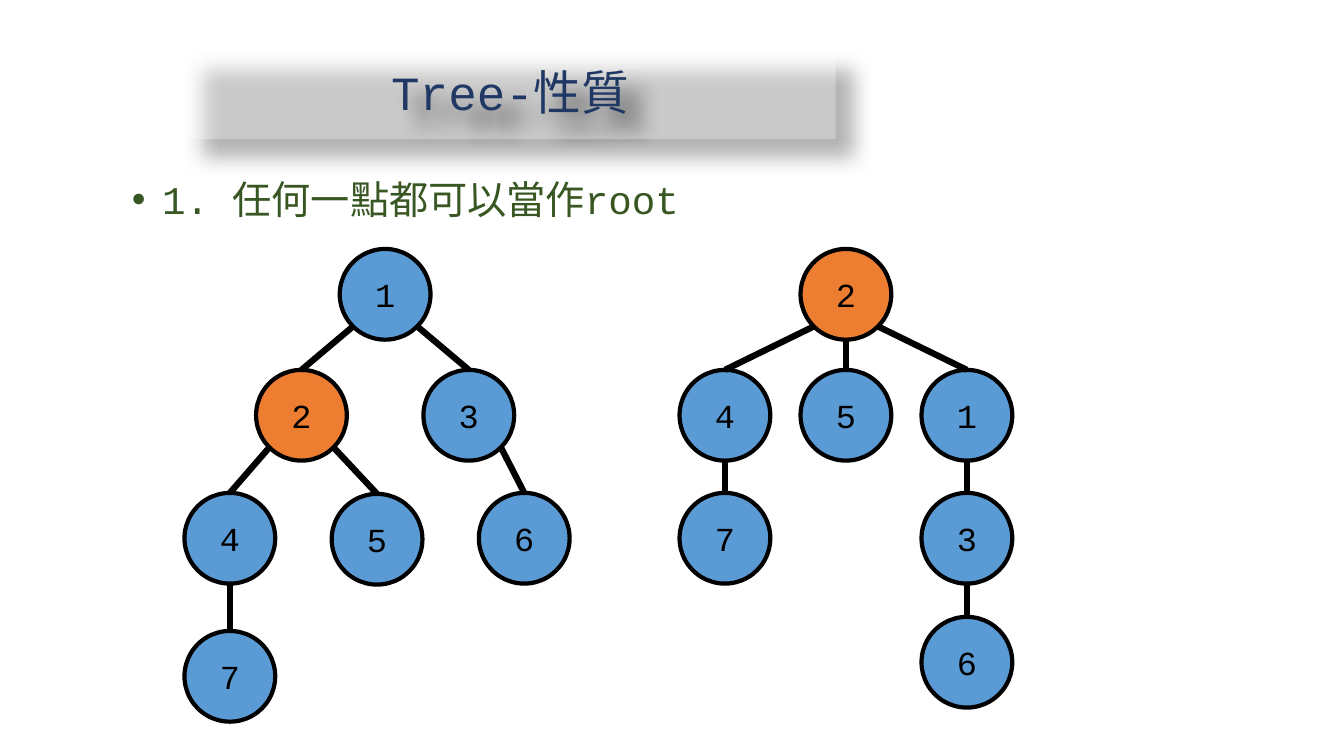
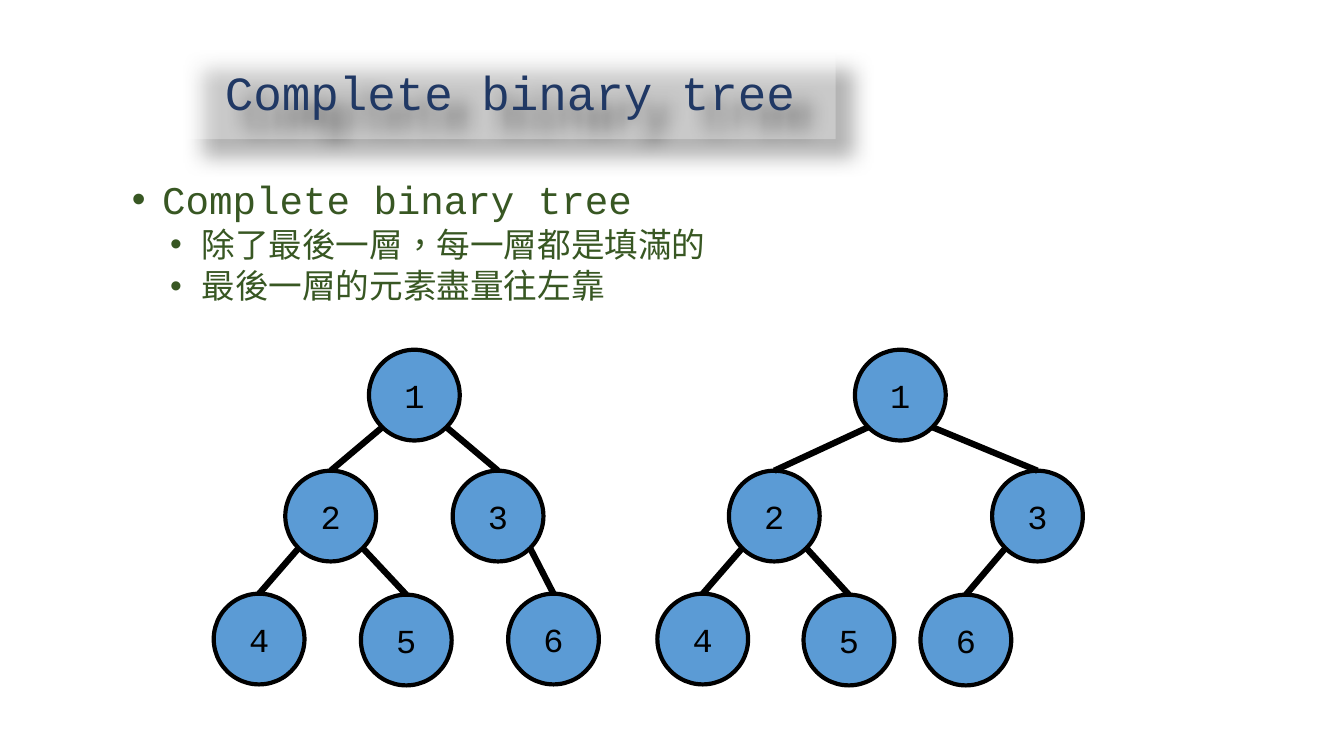
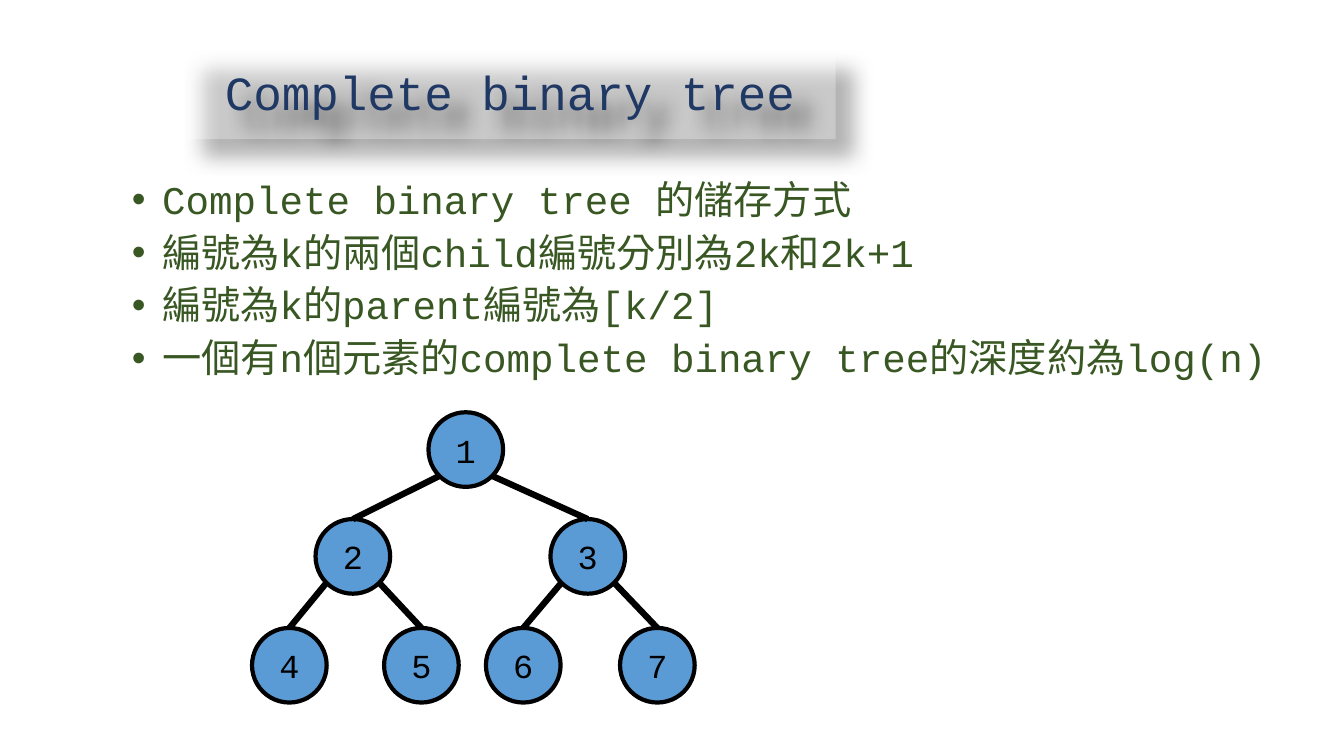
import math
from dataclasses import dataclass
from lxml import etree
from pptx import Presentation
from pptx import util as u
from pptx.dml.color import RGBColor
from pptx.enum import shapes, text
from pptx.oxml import ns


@dataclass(frozen=True)
class Theme:
    font: str = "Courier New"
    title: str = "203864"
    body: str = "385723"
    ink: str = "000000"
    node: str = "5B9BD5"
    marked: str = "ED7D31"
    band: str = "FFFFFF"
    title_size: int = 34
    body_sizes: tuple = (28, 24)
    node_size: int = 24
    outline: float = 3
    edge: float = 4.5


theme = Theme()


def add_run(paragraph, words, size, color):
    run = paragraph.add_run()
    run.text = words
    run.font.size = u.Pt(size)
    run.font.color.rgb = RGBColor.from_string(color)
    run.font.name = theme.font
    properties = run.font._element if hasattr(run.font, "_element") else run._r.get_or_add_rPr()
    properties.set("lang", "zh-TW")
    etree.SubElement(properties, ns.qn("a:ea"), typeface=theme.font)


def add_child(parent, tag, **attributes):
    return etree.SubElement(parent, ns.qn(tag), **attributes)


BULLET_LEVELS = [(0.3, -0.3, 7.5), (0.69, -0.31, 3.8)]

left_tree = {
    "1": (3.37, 2.47, None), "2": (2.54, 3.67, "1"), "3": (4.2, 3.67, "1"),
    "4": (1.83, 4.89, "2"), "5": (3.29, 4.9, "2"), "6": (4.75, 4.89, "3"),
}
rooted_at_one = left_tree | {"7": (1.83, 6.26, "4")}
rooted_at_two = {
    "2": (7.94, 2.47, None), "4": (6.74, 3.67, "2"), "5": (7.94, 3.67, "2"),
    "1": (9.14, 3.67, "2"), "7": (6.74, 4.89, "4"), "3": (9.14, 4.89, "1"),
    "6": (9.14, 6.12, "3"),
}
not_complete = {label: (round(x + 0.29, 2), round(y + 1, 2), parent)
                for label, (x, y, parent) in left_tree.items()}
complete = {
    "1": (8.48, 3.47, None), "2": (7.23, 4.67, "1"), "3": (9.84, 4.67, "1"),
    "4": (6.52, 5.89, "2"), "5": (7.97, 5.9, "2"), "6": (9.13, 5.9, "3"),
}
numbered = {
    "1": (4.25, 4.09, None), "2": (3.13, 5.15, "1"), "3": (5.46, 5.15, "1"),
    "4": (2.5, 6.23, "2"), "5": (3.81, 6.23, "2"),
    "6": (4.82, 6.23, "3"), "7": (6.15, 6.23, "3"),
}

pages = [
    ("Tree-性質",
     [(0, "1. 任何一點都可以當作root")],
     [rooted_at_one, rooted_at_two], 0.9, "2"),
    ("Complete binary tree",
     [(0, "Complete binary tree"),
      (1, "除了最後一層，每一層都是填滿的"),
      (1, "最後一層的元素盡量往左靠")],
     [not_complete, complete], 0.9, None),
    ("Complete binary tree",
     [(0, "Complete binary tree 的儲存方式"),
      (0, "編號為k的兩個child編號分別為2k和2k+1"),
      (0, "編號為k的parent編號為[k/2]"),
      (0, "一個有n個元素的complete binary tree的深度約為log(n)")],
     [numbered], 0.74, None),
]

deck = Presentation()
deck.slide_width, deck.slide_height = u.Inches(13.33), u.Inches(7.5)

for heading, points, trees, diameter, marked_label in pages:
    slide = deck.slides.add_slide(deck.slide_layouts[6])

    band = slide.shapes.add_shape(shapes.MSO_SHAPE.RECTANGLE, u.Inches(1.83),
                                  u.Inches(0.51), u.Inches(6.46), u.Inches(0.87))
    band.fill.solid()
    band.fill.fore_color.rgb = RGBColor.from_string(theme.band)
    band_color = band._element.spPr.find(ns.qn("a:solidFill"))[0]
    add_child(band_color, "a:alpha", val="30000")
    band.line.fill.background()
    band.shadow.inherit = False
    effects = band._element.spPr.find(ns.qn("a:effectLst"))
    cast = add_child(effects, "a:outerShdw", blurRad=str(u.Pt(15)), dist=str(u.Pt(18)),
                     dir="2700000", algn="tl", rotWithShape="0")
    add_child(add_child(cast, "a:srgbClr", val=theme.ink), "a:alpha", val="30000")
    band.text_frame.word_wrap = True
    band.text_frame.vertical_anchor = text.MSO_ANCHOR.MIDDLE
    title = band.text_frame.paragraphs[0]
    title.alignment = text.PP_ALIGN.CENTER
    title.line_spacing = 0.9
    add_run(title, heading, theme.title_size, theme.title)

    outline = slide.shapes.add_textbox(u.Inches(1.21), u.Inches(1.74),
                                       u.Inches(11.5), u.Inches(5.06)).text_frame
    outline.word_wrap = True
    for index, (level, words) in enumerate(points):
        point = outline.add_paragraph() if index else outline.paragraphs[0]
        margin, indent, gap = BULLET_LEVELS[level]
        point.level = level
        point.line_spacing = 0.9
        point.space_before = u.Pt(gap if index else 0)
        layout = point._p.get_or_add_pPr()
        layout.set("marL", str(u.Inches(margin)))
        layout.set("indent", str(u.Inches(indent)))
        add_child(layout, "a:buFont", typeface="Arial")
        add_child(layout, "a:buChar", char="•")
        add_run(point, words, theme.body_sizes[level], theme.body)

    radius = diameter / 2
    corner = radius * math.sqrt(0.5)
    for tree in trees:
        for label, (x, y, parent) in tree.items():
            node = slide.shapes.add_shape(shapes.MSO_SHAPE.OVAL, u.Inches(x), u.Inches(y),
                                          u.Inches(diameter), u.Inches(diameter))
            node.shadow.inherit = False
            node.fill.solid()
            node.fill.fore_color.rgb = RGBColor.from_string(
                theme.marked if label == marked_label else theme.node)
            node.line.color.rgb = RGBColor.from_string(theme.ink)
            node.line.width = u.Pt(theme.outline)
            node.text_frame.vertical_anchor = text.MSO_ANCHOR.MIDDLE
            number = node.text_frame.paragraphs[0]
            number.alignment = text.PP_ALIGN.CENTER
            add_run(number, label, theme.node_size, theme.ink)

        for x, y, parent in tree.values():
            if parent is None:
                continue
            parent_x, parent_y, _ = tree[parent]
            side = (x > parent_x) - (x < parent_x)
            drop = corner if side else radius
            edge = slide.shapes.add_connector(
                shapes.MSO_CONNECTOR.STRAIGHT,
                u.Inches(parent_x + radius + side * corner),
                u.Inches(parent_y + radius + drop),
                u.Inches(x + radius), u.Inches(y))
            edge.line.color.rgb = RGBColor.from_string(theme.ink)
            edge.line.width = u.Pt(theme.edge)
            add_child(edge._element.spPr, "a:effectLst")

deck.save("out.pptx")
